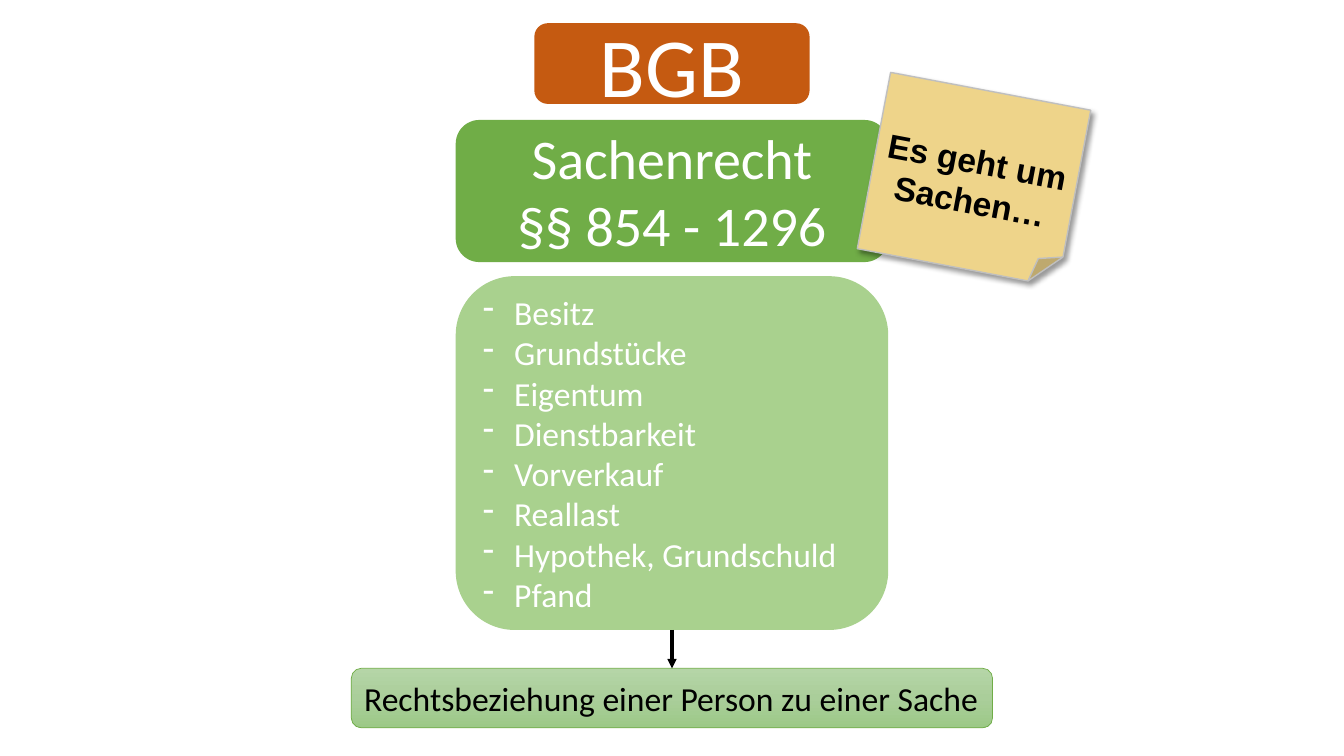
import copy
from dataclasses import dataclass

import lxml.etree
import pptx
import pptx.dml.color
import pptx.enum.shapes
import pptx.enum.text
import pptx.oxml
import pptx.oxml.ns
import pptx.util

SHAPE = pptx.enum.shapes.MSO_SHAPE
ALIGN = pptx.enum.text.PP_ALIGN
qn = pptx.oxml.ns.qn


@dataclass(frozen=True)
class Theme:
    """Colours, fonts and type sizes of the slide."""
    orange: str = "C55A11"
    green: str = "70AD47"
    light_green: str = "A9D18E"
    fade: tuple = ((0, "B5D5A7"), (0.5, "AACE9A"), (1, "9CC987"))
    paper: str = "EED48A"
    paper_edge: str = "BFBFBF"
    white: str = "FFFFFF"
    black: str = "000000"
    font: str = "Calibri"
    note_font: str = "Arial"
    title: int = 60
    heading: int = 40
    body: int = 24


def rgb(color):
    """Turn a hex string into a colour."""
    return pptx.dml.color.RGBColor.from_string(color)


def add_sub(parent, tag, **attrs):
    """Append an XML child with the given attributes."""
    return lxml.etree.SubElement(parent, qn(tag), {k: str(v) for k, v in attrs.items()})


def write(tf, text, *, size, font, color, bold=False, align=ALIGN.CENTER, bullet=None):
    """Write each line of text as one formatted paragraph."""
    tf.word_wrap = True
    tf.vertical_anchor = pptx.enum.text.MSO_ANCHOR.MIDDLE
    for i, line in enumerate(text.split("\n")):
        p = tf.add_paragraph() if i else tf.paragraphs[0]
        p.alignment = align
        r = p.add_run()
        r.text = line
        r.font.size = pptx.util.Pt(size)
        r.font.name = font
        r.font.bold = bold
        r.font.color.rgb = rgb(color)
        if bullet:
            pPr = p._p.get_or_add_pPr()
            indent = pptx.util.Inches(0.31)
            pPr.set("marL", str(indent))
            pPr.set("indent", str(-indent))
            add_sub(pPr, "a:buFontTx")
            add_sub(pPr, "a:buChar", char=bullet)


class Board:
    """Draw on one slide, with lengths in percent of its size."""

    def __init__(self, prs, theme):
        """Add a blank slide."""
        self.prs, self.theme = prs, theme
        self.s = prs.slides.add_slide(prs.slide_layouts[6])

    def x(self, share):
        """Convert a share of the width."""
        return round(self.prs.slide_width * share / 100)

    def y(self, share):
        """Convert a share of the height."""
        return round(self.prs.slide_height * share / 100)

    def shape(self, kind, center, top, w, h, fill, line=None, weight=1):
        """Add a filled shape centred on a vertical axis."""
        sp = self.s.shapes.add_shape(kind, self.x(center - w / 2), self.y(top),
                                     self.x(w), self.y(h))
        if isinstance(fill, str):
            sp.fill.solid()
            sp.fill.fore_color.rgb = rgb(fill)
        else:
            self.gradient(sp, fill)
        if line:
            sp.line.color.rgb = rgb(line)
            sp.line.width = pptx.util.Pt(weight)
        else:
            sp.line.fill.background()
        sp.shadow.inherit = False
        return sp

    def gradient(self, sp, stops):
        """Fill a shape from top to bottom."""
        sp.fill.gradient()
        sp.fill.gradient_angle = 270
        gs = sp._element.spPr.find(".//" + qn("a:gs"))
        for extra in range(len(stops) - 2):
            gs.addnext(copy.deepcopy(gs))
        for stop, (position, color) in zip(sp.fill.gradient_stops, stops):
            stop.position = position
            stop.color.rgb = rgb(color)

    def box(self, text, top, w, h, fill, line=None, weight=1, **fmt):
        """Add a rounded box on the slide's centre axis."""
        sp = self.shape(SHAPE.ROUNDED_RECTANGLE, 50, top, w, h, fill, line, weight)
        t = self.theme
        write(sp.text_frame, text, **{"font": t.font, "color": t.white, **fmt})

    def arrow(self, top, bottom):
        """Add a downward arrow on the centre axis."""
        c = self.s.shapes.add_connector(pptx.enum.shapes.MSO_CONNECTOR.STRAIGHT,
                                        self.x(50), self.y(top), self.x(50), self.y(bottom))
        c.line.color.rgb = rgb(self.theme.black)
        c.line.width = pptx.util.Pt(2.25)
        add_sub(c.line._get_or_add_ln(), "a:tailEnd", type="triangle")
        add_sub(c._element.spPr, "a:effectLst")

    def note(self, text, center, top, w, h, rotation):
        """Add a tilted sticky note with a soft shadow."""
        t = self.theme
        sp = self.shape(SHAPE.FOLDED_CORNER, center, top, w, h, t.paper, t.paper_edge)
        sp.rotation = rotation
        effects = sp._element.spPr.find(qn("a:effectLst"))
        shadow = add_sub(effects, "a:outerShdw", blurRad=pptx.util.Pt(4),
                         dist=pptx.util.Pt(3), dir=45 * 60000, algn="tl", rotWithShape=0)
        add_sub(add_sub(shadow, "a:srgbClr", val=t.black), "a:alpha", val=40000)
        sp.text_frame.margin_top = pptx.util.Inches(0.37)
        write(sp.text_frame, text, size=t.body, font=t.note_font, color=t.black, bold=True)


def main():
    """Build and save the slide."""
    prs = pptx.Presentation()
    prs.slide_width, prs.slide_height = pptx.util.Inches(13.33), pptx.util.Inches(7.5)
    t = Theme()
    b = Board(prs, t)
    topics = ("Besitz", "Grundstücke", "Eigentum", "Dienstbarkeit", "Vorverkauf",
              "Reallast", "Hypothek, Grundschuld", "Pfand")
    column = 32.18
    list_top, list_height, result_top = 36.53, 46.8, 88.4
    b.box("BGB", 3.07, 20.48, 10.67, t.orange, size=t.title)
    b.box("Sachenrecht\n§§ 854 - 1296", 15.87, column, 18.8, t.green, size=t.heading)
    b.box("\n".join(topics), list_top, column, list_height, t.light_green,
          size=t.body, align=ALIGN.LEFT, bullet="-")
    b.box("Rechtsbeziehung einer Person zu einer Sache", result_top, 47.71, 7.87, t.fade,
          t.green, 0.5, size=t.body, color=t.black, align=ALIGN.LEFT)
    b.arrow(list_top + list_height, result_top)
    b.note("Es geht um Sachen…", 72.47, 11.87, 15.15, 23.73, 10.7)
    prs.save("out.pptx")


main()
